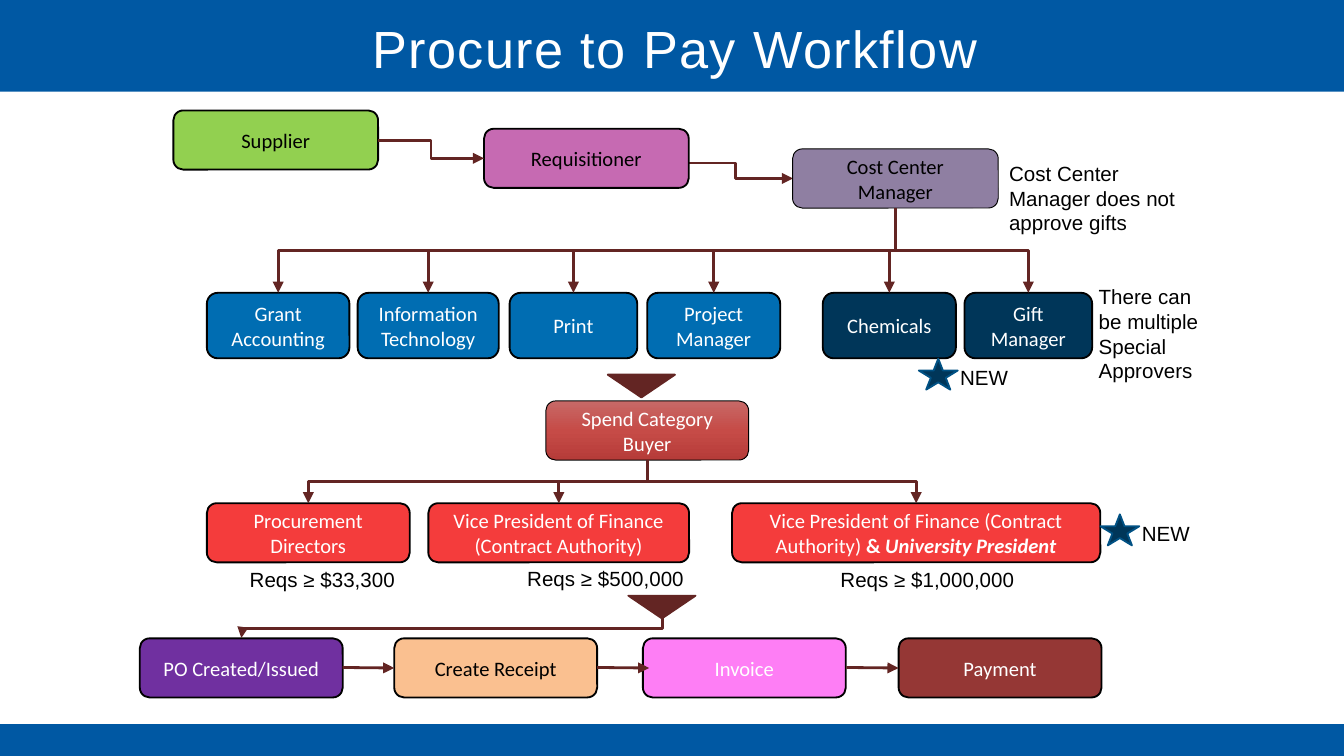
from copy import deepcopy

from lxml import etree
from pptx import Presentation
from pptx.dml.color import RGBColor
from pptx.enum import shapes, text
from pptx.oxml import ns
from pptx.util import Pt

WHITE = RGBColor(0xFF, 0xFF, 0xFF)
BLACK = RGBColor(0x00, 0x00, 0x00)
BAND = RGBColor(0x00, 0x58, 0xA3)
GREEN = RGBColor(0x92, 0xD0, 0x50)
ORCHID = RGBColor(0xC6, 0x6A, 0xB2)
MAUVE = RGBColor(0x60, 0x4A, 0x7B)
BLUE = RGBColor(0x00, 0x6D, 0xB2)
NAVY = RGBColor(0x00, 0x36, 0x59)
STAR_EDGE = RGBColor(0x00, 0x51, 0x84)
RED = RGBColor(0xF4, 0x3C, 0x3C)
PURPLE = RGBColor(0x70, 0x30, 0xA0)
PEACH = RGBColor(0xFA, 0xC0, 0x90)
PINK = RGBColor(0xFE, 0x7E, 0xF5)
BRICK = RGBColor(0x95, 0x37, 0x35)
MAROON = RGBColor(0x63, 0x25, 0x23)
BUYER_STOPS = ((0, RGBColor(0xC7, 0x69, 0x67)),
               (0.5, RGBColor(0xC6, 0x4B, 0x47)),
               (1, RGBColor(0xB6, 0x3C, 0x39)))

BOX_HEIGHT = 31.7
STAGE_WIDTH = 108.7


def style_font(font, color, name="Calibri", size=11):
    font.name = name
    font.size = Pt(size)
    font.color.rgb = color


def add_figure(slide, kind, left, top, width, height, fill, edge=None, weight=1):
    shape = slide.shapes.add_shape(kind, Pt(left), Pt(top), Pt(width), Pt(height))
    shape.shadow.inherit = False
    shape.fill.solid()
    shape.fill.fore_color.rgb = fill
    if edge is None:
        shape.line.fill.background()
    else:
        shape.line.color.rgb = edge
        shape.line.width = Pt(weight)
    return shape


def add_box(slide, label, left, top, width, height, fill, color=WHITE, weight=1):
    shape = add_figure(slide, shapes.MSO_SHAPE.ROUNDED_RECTANGLE,
                       left, top, width, height, fill, BLACK, weight)
    frame = shape.text_frame
    frame.word_wrap = True
    frame.vertical_anchor = text.MSO_ANCHOR.MIDDLE
    paragraph = frame.paragraphs[0]
    paragraph.alignment = text.PP_ALIGN.CENTER
    paragraph.add_run().text = label
    style_font(paragraph.font, color)
    return shape


def add_label(slide, label, left, top, width, height, wrap=True):
    box = slide.shapes.add_textbox(Pt(left), Pt(top), Pt(width), Pt(height))
    box.text_frame.word_wrap = wrap
    paragraph = box.text_frame.paragraphs[0]
    paragraph.text = label
    style_font(paragraph.font, BLACK, "Arial")
    return box


def add_title(slide, label):
    box = add_label(slide, label, 13.7, 5.8, 696.2, 43.2)
    box.text_frame.vertical_anchor = text.MSO_ANCHOR.MIDDLE
    paragraph = box.text_frame.paragraphs[0]
    paragraph.alignment = text.PP_ALIGN.CENTER
    paragraph.line_spacing = 0.9
    style_font(paragraph.font, WHITE, "Arial", 28)
    paragraph.runs[0]._r.get_or_add_rPr().set("spc", "80")


def add_new_badge(slide, left, top):
    add_figure(slide, shapes.MSO_SHAPE.STAR_5_POINT, left, top, 20.9, 16.6,
               NAVY, STAR_EDGE)
    add_label(slide, "NEW", left + 15.1, top, 41, 20.9)


def add_down_triangle(slide, left, top):
    shape = add_figure(slide, shapes.MSO_SHAPE.ISOSCELES_TRIANGLE,
                       left, top, 36, 12.2, MAROON, MAROON)
    shape.rotation = 180


def add_arrow(slide, kind, x1, y1, x2, y2):
    connector = slide.shapes.add_connector(kind, Pt(x1), Pt(y1), Pt(x2), Pt(y2))
    connector.line.color.rgb = MAROON
    connector.line.width = Pt(1.5)
    line = connector.line._get_or_add_ln()
    etree.SubElement(line, ns.qn("a:tailEnd"), type="triangle")
    etree.SubElement(connector._element.spPr, ns.qn("a:effectLst"))
    return connector


def add_side_elbow(slide, x1, y1, x2, y2):
    return add_arrow(slide, shapes.MSO_CONNECTOR.ELBOW, x1, y1, x2, y2)


def add_down_elbow(slide, x1, y1, x2, y2):
    """Elbow that leaves downward: a sideways elbow turned about its centre."""
    center_x, center_y = (x1 + x2) / 2, (y1 + y2) / 2
    half_width, half_height = (y2 - y1) / 2, abs(x2 - x1) / 2
    angle = 90
    if x2 > x1:
        angle, half_width = 270, -half_width
    connector = add_side_elbow(slide, center_x - half_width, center_y - half_height,
                               center_x + half_width, center_y + half_height)
    transform = connector._element.spPr.find(ns.qn("a:xfrm"))
    transform.set("rot", str(angle * 60000))


def add_branches(slide, parent, children):
    start_x = (parent.left + parent.width / 2) / Pt(1)
    start_y = (parent.top + parent.height) / Pt(1)
    for child in children:
        add_down_elbow(slide, start_x, start_y,
                       (child.left + child.width / 2) / Pt(1), child.top / Pt(1))


def set_gradient(shape, stops):
    shape.fill.gradient()
    shape.fill.gradient_angle = 270
    stop_list = shape._element.spPr.find(".//" + ns.qn("a:gsLst"))
    stop_list.append(deepcopy(stop_list[-1]))
    for stop, (position, color) in zip(shape.fill.gradient_stops, stops):
        stop.position = position
        stop.color.rgb = color


def main():
    presentation = Presentation()
    presentation.slide_width, presentation.slide_height = Pt(720), Pt(405)
    slide = presentation.slides.add_slide(presentation.slide_layouts[6])

    # Bands and title
    for top, height in ((388, 17), (0, 49.2)):
        add_figure(slide, shapes.MSO_SHAPE.RECTANGLE, 0, top, 720, height, BAND)
    add_title(slide, "Procure to Pay Workflow")

    # Request: supplier to cost center
    add_side_elbow(slide, 363.6, 87.3, 424.8, 95.6)
    add_box(slide, "Supplier", 92.9, 59.2, 109.7, BOX_HEIGHT, GREEN, BLACK)
    add_box(slide, "Requisitioner", 259.3, 69, 109.7, BOX_HEIGHT, ORCHID, BLACK)
    cost_center = add_box(slide, "Cost Center Manager", 424.6, 79.8, 110.2,
                          BOX_HEIGHT, MAUVE, BLACK, 0.5)
    fill_color = cost_center._element.spPr.find(".//" + ns.qn("a:srgbClr"))
    etree.SubElement(fill_color, ns.qn("a:alpha"), val="70000")
    add_side_elbow(slide, 202.5, 75.2, 259.3, 84.8)
    add_label(slide, "Cost Center Manager does not approve gifts",
              533.5, 82.8, 105.8, 47.5)

    # Special approvers
    approvers = [add_box(slide, label, left, 156.9, width, 35.1, fill)
                 for label, left, width, fill in (
                     ("Grant Accounting", 110.8, 76.4, BLUE),
                     ("Information Technology", 191.6, 75.6, BLUE),
                     ("Print", 273, 68.4, BLUE),
                     ("Project Manager", 346.7, 71.3, BLUE),
                     ("Chemicals", 440.8, 71.3, NAVY),
                     ("Gift Manager", 516.7, 68.4, NAVY))]
    add_branches(slide, cost_center, approvers)
    add_label(slide, "There can be multiple Special Approvers", 581.5, 148.8, 73.4, 60.5)
    add_new_badge(slide, 492.2, 192.2)

    # Buyer
    add_down_triangle(slide, 325.6, 200.7)
    buyer = add_box(slide, "Spend Category Buyer", 292.4, 214.8, STAGE_WIDTH,
                    BOX_HEIGHT, RED, weight=0.5)
    set_gradient(buyer, BUYER_STOPS)

    # Contract authority levels
    vice_president = "Vice President of Finance (Contract Authority)"
    levels = [add_box(slide, label, left, 269.6, width, BOX_HEIGHT, RED)
              for label, left, width in (
                  ("Procurement Directors", 110.8, STAGE_WIDTH),
                  (vice_president, 229.5, 139.7),
                  (vice_president + " ", 392.2, 197.3))]
    paragraph = levels[-1].text_frame.paragraphs[0]
    for label, italic in (("& ", False), ("University President", True)):
        run = paragraph.add_run()
        run.text = label
        run.font.bold, run.font.italic = True, italic
    add_branches(slide, buyer, levels)
    add_new_badge(slide, 589.5, 275.6)
    add_label(slide, "Reqs ≥ $33,300", 126.7, 300.2, 95.8, 20.9)
    add_label(slide, "Reqs ≥ $500,000", 275.4, 299.7, 105.1, 20.9)
    add_label(slide, "Reqs ≥ $1,000,000", 443.2, 300.2, 108, 20.9, wrap=False)

    # Order to payment
    add_down_triangle(slide, 336.6, 319.1)
    for label, left, fill, color in (("PO Created/Issued", 74.9, PURPLE, WHITE),
                                     ("Create Receipt", 211.2, PEACH, BLACK),
                                     ("Invoice", 344.4, PINK, WHITE),
                                     ("Payment", 481.4, BRICK, WHITE)):
        add_box(slide, label, left, 342, STAGE_WIDTH, BOX_HEIGHT, fill, color)
    add_down_elbow(slide, 354.7, 331.3, 129.3, 341.8)
    for start, end in ((183.6, 211.2), (319.9, 347.8), (453.4, 481.4)):
        add_arrow(slide, shapes.MSO_CONNECTOR.STRAIGHT, start, 357.6, end, 357.9)

    presentation.save("out.pptx")


if __name__ == "__main__":
    main()
